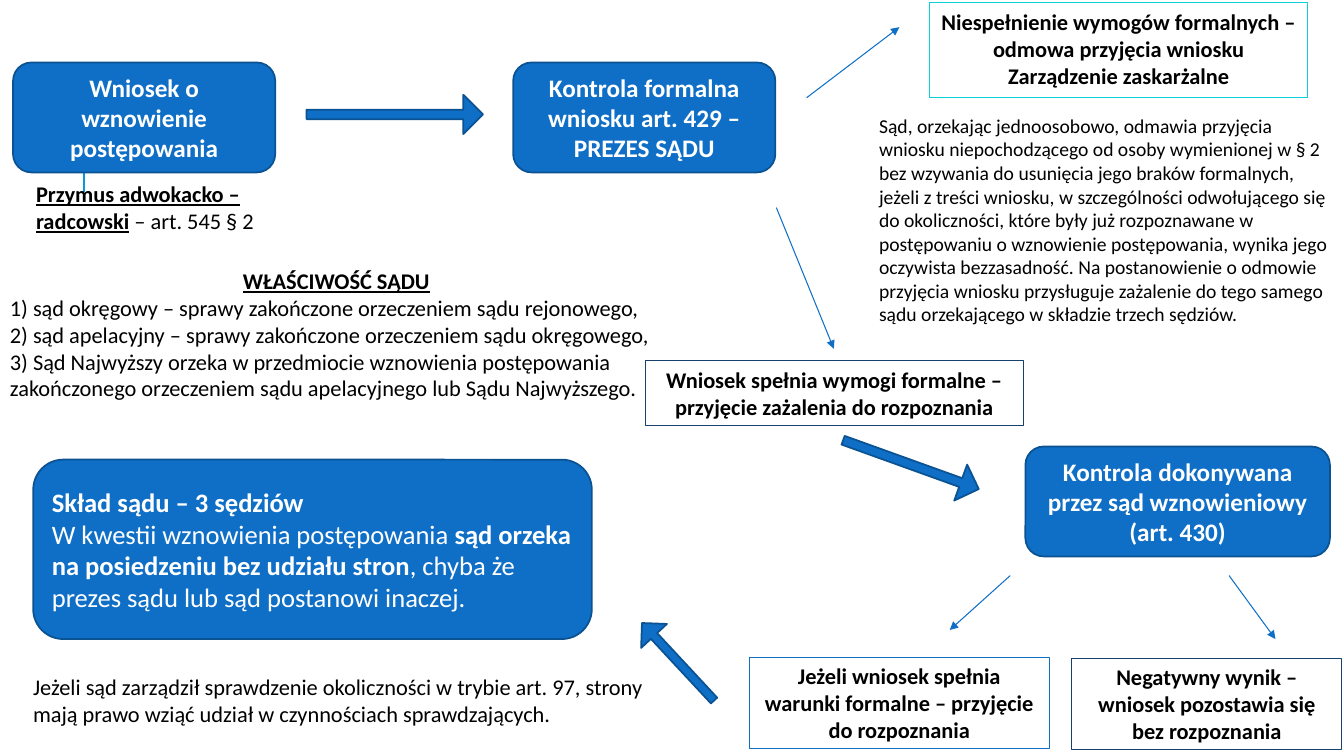
import pptx
import pptx.util
import pptx.dml.color
import pptx.enum.shapes
import pptx.enum.text
import pptx.oxml
import pptx.oxml.ns

Inches = pptx.util.Inches
Shapes = pptx.enum.shapes.MSO_SHAPE
Align = pptx.enum.text.PP_ALIGN
Anchor = pptx.enum.text.MSO_ANCHOR

FONT = "Calibri"
COLORS = {"blue": "0F6FC6", "edge": "0B5292", "navy": "17406D", "aqua": "0BD0D9",
          "sky": "009DD9", "white": "FFFFFF", "black": "000000"}

# content
STAGES = [
    ((0.13, 0.62, 2.6, 1.09), 18, Align.CENTER,
     [[("Wniosek o wznowienie postępowania", "b")]]),
    ((5.09, 0.62, 2.6, 1.09), 18, Align.CENTER,
     [[("Kontrola formalna wniosku art. 429 – PREZES SĄDU", "b")]]),
    ((10.17, 4.43, 3.02, 1.09), 18, Align.CENTER,
     [[("Kontrola dokonywana przez sąd wznowieniowy (art. 430)", "b")]]),
    ((0.33, 4.56, 5.54, 1.78), 19, Align.LEFT,
     [[("Skład sądu – 3 sędziów", "b")],
      [("W kwestii wznowienia postępowania ", ""),
       ("sąd orzeka na posiedzeniu bez udziału stron", "b"),
       (", chyba że prezes sądu lub sąd postanowi inaczej.", "")]]),
]

OUTCOMES = [
    ((9.22, 0.03, 3.75, 0.94), "aqua",
     [[("Niespełnienie wymogów formalnych – odmowa przyjęcia wniosku", "b")],
      [("Zarządzenie zaskarżalne", "b")]]),
    ((6.4, 3.58, 3.75, 0.64), "navy",
     [[("Wniosek spełnia wymogi formalne – przyjęcie zażalenia do rozpoznania", "b")]]),
    ((10.63, 6.53, 2.68, 0.91), "navy",
     [[("Negatywny wynik – wniosek pozostawia się bez rozpoznania", "b")]]),
    ((7.43, 6.52, 2.98, 0.91), "blue",
     [[("Jeżeli wniosek spełnia warunki formalne – przyjęcie do rozpoznania", "b")]]),
]

NOTES = [
    ((0.26, 1.74, 2.73, 0.64), 16,
     [[("Przymus adwokacko – radcowski", "bu"), (" – art. 545 § 2", "")]]),
    ((0, 2.6, 6.67, 1.45), 16,
     [[("WŁAŚCIWOŚĆ SĄDU", "buc")],
      [("1) sąd okręgowy – sprawy zakończone orzeczeniem sądu rejonowego,", "")],
      [("2) sąd apelacyjny – sprawy zakończone orzeczeniem sądu okręgowego,", "")],
      [("3) Sąd Najwyższy orzeka w przedmiocie wznowienia postępowania "
        "zakończonego orzeczeniem sądu apelacyjnego lub Sądu Najwyższego.", "")]]),
    ((0.23, 6.63, 6.67, 0.64), 16,
     [[("Jeżeli sąd zarządził sprawdzenie okoliczności w trybie art. 97, strony "
        "mają prawo wziąć udział w czynnościach sprawdzających.", "")]]),
    ((8.62, 1.08, 4.71, 2.22), 14,
     [[("Sąd, orzekając jednoosobowo, odmawia przyjęcia wniosku niepochodzącego od osoby "
        "wymienionej w § 2 bez wzywania do usunięcia jego braków formalnych, jeżeli z treści "
        "wniosku, w szczególności odwołującego się do okoliczności, które były już "
        "rozpoznawane w postępowaniu o wznowienie postępowania, wynika jego oczywista "
        "bezzasadność. Na postanowienie o odmowie przyjęcia wniosku przysługuje zażalenie do "
        "tego samego sądu orzekającego w składzie trzech sędziów.", "")]]),
]

BLOCK_ARROWS = [
    ((3.04, 0.94, 1.75, 0.39), 0),
    ((8.32, 4.42, 1.43, 0.38), 19.8),
    ((6.2, 6.39, 1.05, 0.35), 227.1),
]

THIN_ARROWS = [
    (8, 0.97, 8.92, 0.27),
    (7.7, 2.06, 8.27, 3.46),
    (12.19, 5.71, 12.65, 6.34),
    (10.02, 5.71, 9.42, 6.25),
]

REQUIREMENT_LINK = (0.83, 1.9, 0.83, 0.9)


def rgb(name):
    return pptx.dml.color.RGBColor.from_string(COLORS[name])


def write(frame, paragraphs, size, color, align, anchor=Anchor.TOP):
    frame.word_wrap = True
    frame.vertical_anchor = anchor
    for index, pieces in enumerate(paragraphs):
        paragraph = frame.add_paragraph() if index else frame.paragraphs[0]
        paragraph.alignment = Align.CENTER if "c" in pieces[0][1] else align
        for words, style in pieces:
            run = paragraph.add_run()
            run.text = words
            run.font.name = FONT
            run.font.size = pptx.util.Pt(size)
            run.font.bold = "b" in style
            run.font.underline = "u" in style
            run.font.color.rgb = rgb(color)


def add_block(kind, box, fill, edge, width):
    block = slide.shapes.add_shape(kind, *map(Inches, box))
    block.shadow.inherit = False
    if fill:
        block.fill.solid()
        block.fill.fore_color.rgb = rgb(fill)
    else:
        block.fill.background()
    block.line.color.rgb = rgb(edge)
    block.line.width = pptx.util.Pt(width)
    return block


def add_line(ends, color, width, arrow=False):
    line = slide.shapes.add_connector(
        pptx.enum.shapes.MSO_CONNECTOR.STRAIGHT, *map(Inches, ends))
    line.line.color.rgb = rgb(color)
    line.line.width = pptx.util.Pt(width)
    if arrow:
        head = pptx.oxml.parse_xml(
            f'<a:tailEnd {pptx.oxml.ns.nsdecls("a")} type="triangle"/>')
        line.line._get_or_add_ln().append(head)
    line._element.spPr.append(
        pptx.oxml.parse_xml(f'<a:effectLst {pptx.oxml.ns.nsdecls("a")}/>'))


presentation = pptx.Presentation()
presentation.slide_width = Inches(13.33)
presentation.slide_height = Inches(7.5)
slide = presentation.slides.add_slide(presentation.slide_layouts[6])

add_line(REQUIREMENT_LINK, "sky", 1.5)

for box, size, align, paragraphs in STAGES:
    stage = add_block(Shapes.ROUNDED_RECTANGLE, box, "blue", "edge", 1.25)
    write(stage.text_frame, paragraphs, size, "white", align, Anchor.MIDDLE)

for box, angle in BLOCK_ARROWS:
    arrow = add_block(Shapes.RIGHT_ARROW, box, "blue", "edge", 1.25)
    arrow.adjustments[0] = 0.24
    arrow.rotation = angle

for ends in THIN_ARROWS:
    add_line(ends, "blue", 0.75, arrow=True)

for box, edge, paragraphs in OUTCOMES:
    outcome = add_block(Shapes.RECTANGLE, box, None, edge, 0.75)
    write(outcome.text_frame, paragraphs, 16, "black", Align.CENTER)

for box, size, paragraphs in NOTES:
    note = slide.shapes.add_textbox(*map(Inches, box))
    write(note.text_frame, paragraphs, size, "black", Align.LEFT)

presentation.save("out.pptx")
